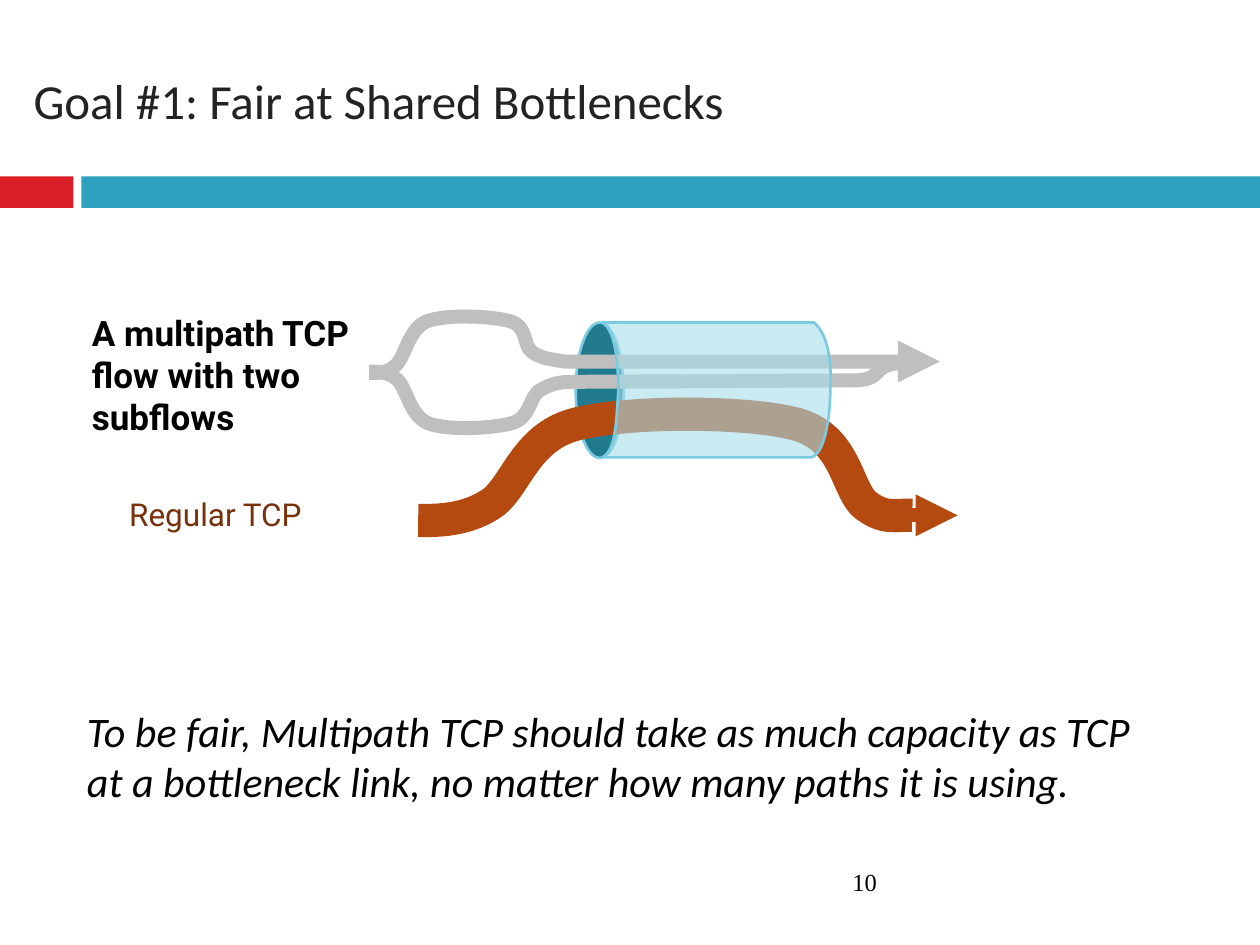
from dataclasses import dataclass

from lxml.etree import SubElement
from pptx import Presentation
from pptx.dml.color import RGBColor
from pptx.enum.shapes import MSO_CONNECTOR, MSO_SHAPE
from pptx.enum.text import MSO_ANCHOR, MSO_AUTO_SIZE, PP_ALIGN
from pptx.oxml.ns import qn
from pptx.util import Pt


@dataclass(frozen=True)
class Theme:
    red: str = "DA1F28"
    teal: str = "2DA2BF"
    title: str = "232323"
    black: str = "000000"
    brown: str = "78310B"
    subflow: str = "BFBFBF"
    regular_flow: str = "B54A10"
    pipe_mouth: str = "227A8F"
    pipe_body: str = "A6DDEA"
    pipe_edge: str = "7ACBE0"
    heading_size: float = 28
    body_size: float = 24
    strong_label_size: float = 20
    label_size: float = 18
    number_size: float = 14
    heading_font: str = "Calibri"
    label_font: str = "Roboto"
    number_font: str = "Times New Roman"


THEME = Theme()


@dataclass(frozen=True)
class Box:
    left: float
    top: float
    width: float
    height: float

    def lengths(self) -> tuple:
        return Pt(self.left), Pt(self.top), Pt(self.width), Pt(self.height)


@dataclass(frozen=True)
class TextStyle:
    font: str
    size: float
    color: str
    bold: bool = False
    italic: bool = False


@dataclass(frozen=True)
class Label:
    text: str
    box: Box
    style: TextStyle


@dataclass(frozen=True)
class Curve:
    """A start point, then points (lines) or groups of three points (Beziers)."""
    start: tuple
    segments: tuple


@dataclass(frozen=True)
class Flow:
    curve: Curve
    color: str
    width: float
    arrow: bool = False


SUBFLOW_LOWER = Curve((211, 212.4), (
    ((213.8, 212.4), (221, 211.7), (226.8, 216.7)),
    ((232.6, 221.8), (234, 237.6), (244.8, 241.9)),
    ((256.3, 246.2), (281.5, 244.8), (292.3, 241.9)),
    ((303.1, 239), (302.4, 227.5), (308.2, 223.2)),
    ((314.6, 219.6), (319, 218.2), (326.9, 218.2)),
    ((488.9, 217.4),),
    ((508.3, 216.7), (493.9, 205.9), (525.6, 207.4)),
))
SUBFLOW_UPPER = Curve((211, 213.1), (
    ((214.6, 213.1), (221, 213.8), (226.1, 208.8)),
    ((231.8, 203.8), (233.3, 187.9), (244.1, 183.6)),
    ((255.6, 179.3), (281.5, 180.7), (291.6, 183.6)),
    ((301.7, 186.5), (298.8, 197.3), (303.8, 200.9)),
    ((308.9, 205.2), (319, 205.9), (322.6, 206.6)),
    ((537.1, 206.6),),
))
REGULAR = Curve((239, 297.4), (
    ((247, 297.4), (264.2, 298.1), (279.4, 288.7)),
    ((294.5, 280.1), (298.8, 250.6), (328.3, 242.6)),
    ((357.8, 234.7), (427.7, 234.7), (455.8, 242.6)),
    ((483.8, 250.6), (483.8, 280.1), (494.6, 288.7)),
    ((506.2, 297.4), (512.6, 293.8), (521.3, 294.5)),
))
PIPE = Curve((344.2, 261.4), (
    ((463.7, 261.4),),
    ((472.3, 258.5), (474.5, 234.7), (474.5, 221.8)),
    ((475.2, 208.8), (473.8, 191.5), (465.1, 184.3)),
    ((344.2, 184.3),),
    ((352.1, 189.4), (352.8, 207.4), (353.5, 221.8)),
    ((352.1, 236.2), (352.8, 257), (344.2, 261.4)),
))
FLOWS = (
    Flow(SUBFLOW_LOWER, THEME.subflow, 8),
    Flow(SUBFLOW_UPPER, THEME.subflow, 8, arrow=True),
    Flow(REGULAR, THEME.regular_flow, 19),
)
LABELS = (
    Label("A multipath TCP flow with two subflows", Box(45.4, 174.6, 162, 80),
          TextStyle(THEME.label_font, THEME.strong_label_size, THEME.black, bold=True)),
    Label("Regular TCP", Box(66.7, 279.4, 140.4, 31.7),
          TextStyle(THEME.label_font, THEME.label_size, THEME.brown)),
    Label("10", Box(480, 491.8, 210.2, 28.8),
          TextStyle(THEME.number_font, THEME.number_size, THEME.black)),
)


def set_fill(shape, color: str) -> None:
    shape.fill.solid()
    shape.fill.fore_color.rgb = RGBColor.from_string(color)


def set_line(shape, color: str, width: float, arrow: bool = False) -> None:
    shape.line.color.rgb = RGBColor.from_string(color)
    shape.line.width = Pt(width)
    if arrow:
        SubElement(shape.line._get_or_add_ln(), qn("a:tailEnd"), type="triangle")


def add_preset(shapes, kind: MSO_SHAPE, box: Box, color: str):
    shape = shapes.add_shape(kind, *box.lengths())
    shape.shadow.inherit = False
    set_fill(shape, color)
    shape.line.fill.background()
    return shape


def add_curve(shapes, curve: Curve, close: bool = False):
    points = [(Pt(x), Pt(y)) for segment in curve.segments for x, y in segment]
    builder = shapes.build_freeform(Pt(curve.start[0]), Pt(curve.start[1]))
    builder.add_line_segments(points, close=close)
    shape = builder.convert_to_shape()
    shape.shadow.inherit = False
    # Join each group of three steps into one Bezier segment
    steps = iter(list(shape._element.iter(qn("a:lnTo"))))
    for segment in curve.segments:
        group = [next(steps) for _ in segment]
        if len(group) == 3:
            bezier = group[0].makeelement(qn("a:cubicBezTo"))
            group[0].addprevious(bezier)
            for step in group:
                bezier.append(step[0])
                step.getparent().remove(step)
    return shape


def write_text(shape, text: str, style: TextStyle, anchor: MSO_ANCHOR = MSO_ANCHOR.TOP):
    frame = shape.text_frame
    frame.word_wrap = True
    frame.auto_size = MSO_AUTO_SIZE.NONE
    frame.vertical_anchor = anchor
    paragraph = frame.paragraphs[0]
    paragraph.text = text
    paragraph.alignment = PP_ALIGN.LEFT
    font = paragraph.font
    font.name, font.size = style.font, Pt(style.size)
    font.bold, font.italic = style.bold, style.italic
    font.color.rgb = RGBColor.from_string(style.color)
    return paragraph


def place(shape, box: Box) -> None:
    shape.left, shape.top, shape.width, shape.height = box.lengths()


def main() -> None:
    presentation = Presentation()
    presentation.slide_width, presentation.slide_height = Pt(720), Pt(540)
    slide = presentation.slides.add_slide(presentation.slide_layouts[1])

    # Title and statement
    title, body = slide.placeholders
    place(title, Box(12, 18, 696.2, 77.8))
    write_text(title, "Goal #1: Fair at Shared Bottlenecks",
               TextStyle(THEME.heading_font, THEME.heading_size, THEME.title),
               MSO_ANCHOR.MIDDLE)
    place(body, Box(42.5, 146.2, 612, 318.2))
    statement = write_text(
        body, "To be fair, Multipath TCP should take as much capacity as TCP "
        "at a bottleneck link, no matter how many paths it is using.",
        TextStyle(THEME.heading_font, THEME.body_size, THEME.black, italic=True),
        MSO_ANCHOR.BOTTOM)
    statement.space_before = Pt(7)
    properties = statement._p.get_or_add_pPr()
    properties.set("marL", "0")
    properties.set("indent", "0")
    properties.insert_element_before(properties.makeelement(qn("a:buNone")),
                                     "a:tabLst", "a:defRPr", "a:extLst")

    # Header band
    add_preset(slide.shapes, MSO_SHAPE.RECTANGLE, Box(0, 100.8, 42, 18), THEME.red)
    add_preset(slide.shapes, MSO_SHAPE.RECTANGLE, Box(46.5, 100.8, 673.5, 18), THEME.teal)

    # Pipe mouth, flows through it, then the translucent pipe
    diagram = slide.shapes.add_group_shape().shapes
    mouth = add_preset(diagram, MSO_SHAPE.OVAL, Box(329, 184.3, 27.4, 77.4), THEME.pipe_mouth)
    set_line(mouth, THEME.pipe_edge, 1.5)
    for flow in FLOWS:
        shape = add_curve(diagram, flow.curve)
        shape.fill.background()
        set_line(shape, flow.color, flow.width, flow.arrow)
    pipe = add_curve(diagram, PIPE, close=True)
    set_fill(pipe, THEME.pipe_body)
    set_line(pipe, THEME.pipe_edge, 1.5)
    color = pipe._element.spPr.find(qn("a:solidFill"))[0]
    SubElement(color, qn("a:alpha"), val="59000")

    # Arrow at the end of the regular flow
    arrow = diagram.add_connector(MSO_CONNECTOR.STRAIGHT, Pt(521.3), Pt(294.5),
                                  Pt(547.2), Pt(294.5))
    set_line(arrow, THEME.regular_flow, 8, arrow=True)
    SubElement(arrow._element.spPr, qn("a:effectLst"))

    # Labels and page number
    for label in LABELS:
        write_text(slide.shapes.add_textbox(*label.box.lengths()), label.text, label.style)

    presentation.save("out.pptx")


if __name__ == "__main__":
    main()
